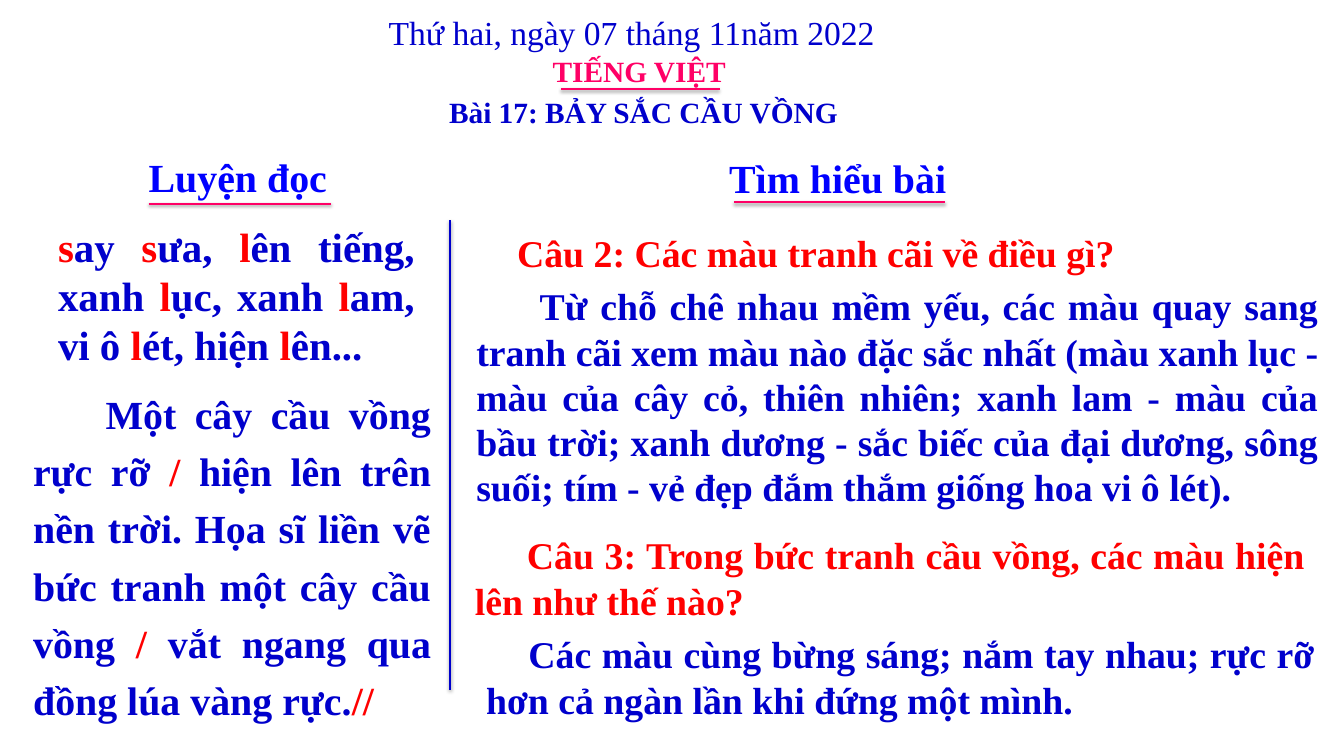
from dataclasses import dataclass

from lxml import etree
from pptx import Presentation
from pptx.dml.color import RGBColor
from pptx.enum.shapes import MSO_CONNECTOR
from pptx.enum.text import MSO_AUTO_SIZE, PP_ALIGN
from pptx.oxml import parse_xml
from pptx.oxml.ns import nsdecls, qn
from pptx.util import Inches, Pt

STRAIGHT = MSO_CONNECTOR.STRAIGHT
GROW = MSO_AUTO_SIZE.SHAPE_TO_FIT_TEXT
LEFT, CENTER, JUSTIFY = PP_ALIGN.LEFT, PP_ALIGN.CENTER, PP_ALIGN.JUSTIFY
SHADOW = (
    f'<a:effectLst {nsdecls("a")}><a:outerShdw blurRad="{Pt(3.1)}" dist="{Pt(1.6)}" '
    'dir="5400000" rotWithShape="0"><a:srgbClr val="000000"><a:alpha val="38000"/>'
    "</a:srgbClr></a:outerShdw></a:effectLst>"
)


@dataclass(frozen=True)
class Theme:
    font: str = "Times New Roman"
    ink: str = "0000CC"
    heading: str = "0000FF"
    accent: str = "FF0000"
    pink: str = "FF0066"
    title_size: int = 28
    date_size: int = 32
    body_size: int = 36
    reading_size: int = 38
    words_size: int = 39
    line_width: int = 2


def add_text(paragraph, text, *, font, size, color, accent, bold=True):
    for index, part in enumerate(text.split("|")):
        if part:
            run = paragraph.add_run()
            run.text = part
            run.font.name = font
            run.font.size = Pt(size)
            run.font.bold = bold
            run.font.color.rgb = RGBColor.from_string(accent if index % 2 else color)


class LessonBoard:
    """Draws the text and ruled lines of a lesson board on one slide."""

    def __init__(self, slide, theme):
        self.slide = slide
        self.theme = theme

    def group(self):
        return self.slide.shapes.add_group_shape().shapes

    def text(self, box, text, size, color, shapes=None, align=JUSTIFY, wrap=True,
             margins=(0.1, 0.05), indent=0, spacing=None, bold=True):
        shapes = self.slide.shapes if shapes is None else shapes
        frame = shapes.add_textbox(*map(Inches, box)).text_frame
        frame.word_wrap = wrap
        frame.auto_size = GROW
        frame.margin_left = frame.margin_right = Inches(margins[0])
        frame.margin_top = frame.margin_bottom = Inches(margins[1])
        paragraph = frame.paragraphs[0]
        paragraph.alignment = align
        if spacing:
            paragraph.line_spacing = spacing
        if indent:
            paragraph._p.get_or_add_pPr().set("indent", str(Inches(indent)))
        add_text(paragraph, text, font=self.theme.font, size=size, color=color,
                 accent=self.theme.accent, bold=bold)

    def line(self, start, end, color, shapes=None):
        shapes = self.slide.shapes if shapes is None else shapes
        line = shapes.add_connector(STRAIGHT, *map(Inches, start + end))
        line.line.color.rgb = RGBColor.from_string(color)
        line.line.width = Pt(self.theme.line_width)
        line._element.find(qn("p:spPr")).append(parse_xml(SHADOW))

    def heading(self, box, text, start, end):
        shapes = self.group()
        self.text(box, text, self.theme.reading_size, self.theme.heading, shapes,
                  CENTER, wrap=False, margins=(0.08, 0.04))
        self.line(start, end, self.theme.pink, shapes)


def main():
    theme = Theme()
    presentation = Presentation()
    presentation.slide_width = Inches(17.8)
    presentation.slide_height = Inches(10)
    slide = presentation.slides.add_slide(presentation.slide_layouts[6])
    board = LessonBoard(slide, theme)

    board.line((5.96, 2.92), (5.96, 9.14), theme.ink)
    board.heading((1.88, 1.98, 2.54, 0.72), "Luyện đọc", (1.97, 2.7), (4.38, 2.7))
    board.heading((9.57, 2, 3.05, 0.72), "Tìm hiểu bài", (9.72, 2.68), (12.52, 2.68))

    answers = [
        ((6.13, 3, 11.19, 0.71), 0.62, theme.accent,
         "Câu 2: Các màu tranh cãi về điều gì?"),
        ((6.21, 3.7, 11.35, 3.13), 0.84, theme.ink,
         "Từ chỗ chê nhau mềm yếu, các màu quay sang tranh cãi xem màu nào đặc sắc "
         "nhất (màu xanh lục - màu của cây cỏ, thiên nhiên; xanh lam - màu của bầu "
         "trời; xanh dương - sắc biếc của đại dương, sông suối; tím - vẻ đẹp đắm "
         "thắm giống hoa vi ô lét)."),
        ((6.19, 7, 11.19, 1.31), 0.69, theme.accent,
         "Câu 3: Trong bức tranh cầu vồng, các màu hiện lên như thế nào?"),
        ((6.34, 8.31, 11.17, 1.31), 0.56, theme.ink,
         "Các màu cùng bừng sáng; nắm tay nhau; rực rỡ hơn cả ngàn lần khi đứng "
         "một mình."),
    ]
    for box, indent, color, text in answers:
        board.text(box, text, theme.body_size, color, indent=indent)

    board.text((5.23, 1.17, 6.58, 0.63), "Bài 17: BẢY SẮC CẦU VỒNG", theme.title_size,
               theme.ink, align=CENTER, margins=(0.16, 0.08))
    board.text((0.67, 2.89, 4.92, 2.07),
               "|s|ay |s|ưa, |l|ên tiếng, xanh |l|ục, xanh |l|am, vi ô |l|ét, hiện |l|ên...",
               theme.words_size, theme.ink)
    board.text((0.34, 4.98, 5.47, 4.64),
               "Một cây cầu vồng rực rỡ |/| hiện lên trên nền trời. Họa sĩ liền vẽ bức "
               "tranh một cây cầu vồng |/ |vắt ngang qua đồng lúa vàng rực.|//|",
               theme.reading_size, theme.ink, indent=0.96, spacing=1.2)

    title = board.group()
    board.text((5.05, 0.11, 6.7, 0.64), "Thứ hai, ngày 07 tháng 11năm 2022",
               theme.date_size, theme.ink, title, LEFT, wrap=False, bold=False)
    board.text((7.22, 0.65, 2.52, 0.57), "TIẾNG VIỆT", theme.title_size, theme.pink,
               title, LEFT, wrap=False)
    board.line((7.43, 1.18), (9.53, 1.18), theme.pink, title)

    presentation.save("out.pptx")


if __name__ == "__main__":
    main()
